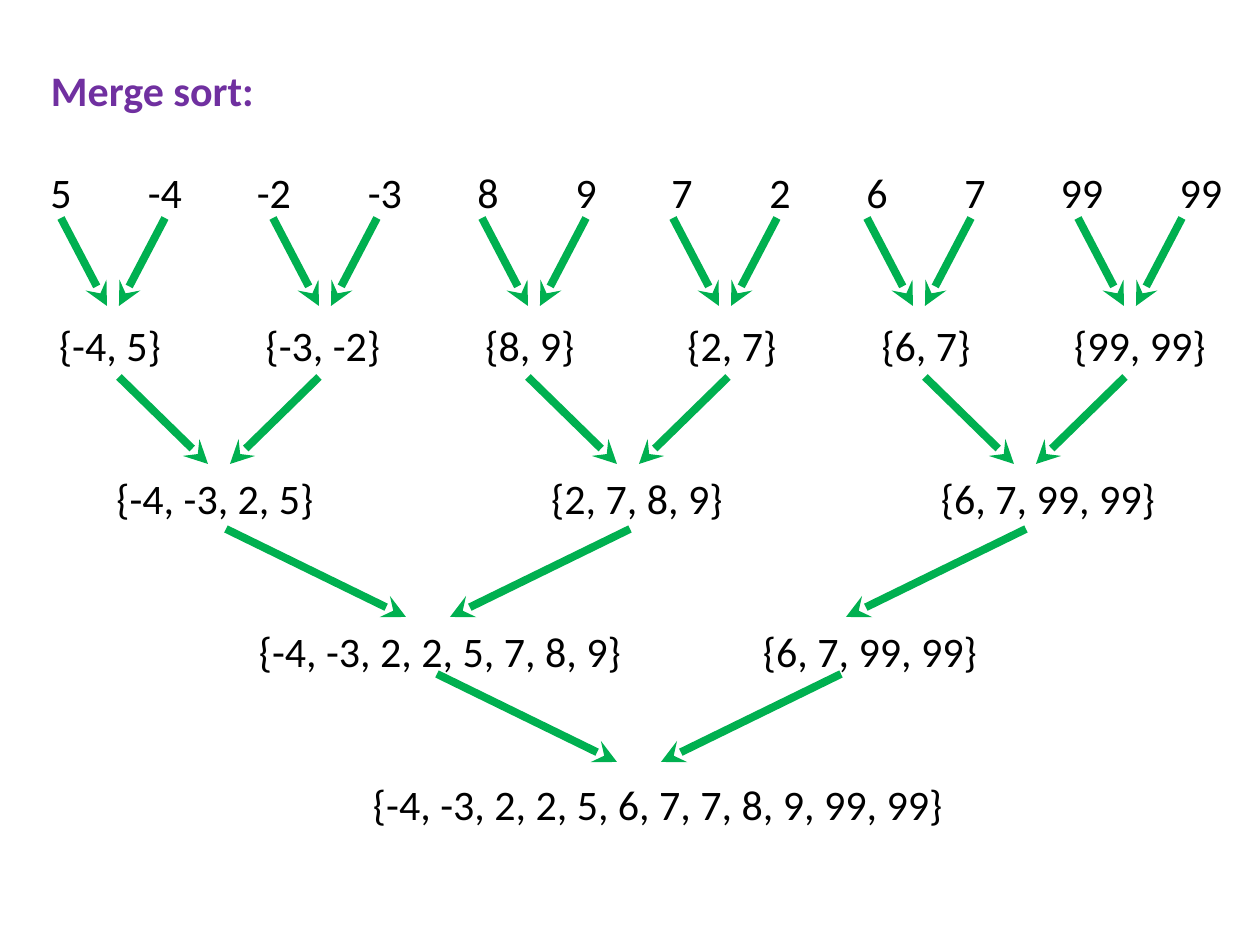
"""Build the merge sort slide: rows of lists joined by pairs of arrows."""
from lxml import etree
from pptx import Presentation
from pptx import util as u
from pptx.dml.color import RGBColor
from pptx.enum import shapes, text
from pptx.oxml.ns import qn

PX = 914400 / 126
PURPLE = RGBColor(0x70, 0x30, 0xA0)
GREEN = RGBColor(0x00, 0xB0, 0x50)
BLACK = RGBColor(0, 0, 0)
LEFT, WIDTH = 38, 1197

ROWS = [
    [("5", 61), ("-4", 165), ("-2", 274), ("-3", 385), ("8", 488), ("9", 586),
     ("7", 682), ("2", 780), ("6", 877), ("7", 975), ("99", 1082), ("99", 1201)],
    [("{-4, 5}", 110), ("{-3, -2}", 323), ("{8, 9}", 530),
     ("{2, 7}", 732), ("{6, 7}", 926), ("{99, 99}", 1140)],
    [("{-4, -3, 2, 5}", 215), ("{2, 7, 8, 9}", 637), ("{6, 7, 99, 99}", 1048)],
    [("{-4, -3, 2, 2, 5, 7, 8, 9}", 440), ("{6, 7, 99, 99}", 870)],
    [("{-4, -3, 2, 2, 5, 6, 7, 7, 8, 9, 99, 99}", 658)],
]
MERGES = [
    (218, 306, 52, 6, [113, 325, 534, 725, 919, 1130]),
    (377, 464, 100, 11, [219, 628, 1025]),
    (529, 617, 202, 22, [428, 824]),
    (674, 762, 202, 22, [639]),
]


def px(n):
    return u.Emu(round(n * PX))


def write(para, words, color=BLACK, bold=False, after=0):
    para.alignment = text.PP_ALIGN.LEFT
    para.space_before = u.Pt(0)
    para.space_after = u.Pt(after)
    run = para.add_run()
    run.text = words
    font = run.font
    font.name, font.size, font.bold = "Calibri", u.Pt(24), bold
    font.color.rgb = color


deck = Presentation()
deck.slide_width, deck.slide_height = px(1260), px(945)
slide = deck.slides.add_slide(deck.slide_layouts[5])

title = slide.shapes.title
title.left, title.top, title.width, title.height = px(LEFT), px(58), px(WIDTH), px(64)
body = slide.shapes.add_textbox(px(LEFT), px(167), px(WIDTH), px(667))
for box in (title, body):
    frame = box.text_frame
    frame.word_wrap = True
    frame.auto_size = text.MSO_AUTO_SIZE.NONE
    frame.vertical_anchor = text.MSO_ANCHOR.TOP
    frame.margin_left = frame.margin_right = frame.margin_bottom = 0
    frame.margin_top = 0
title.text_frame.margin_left = px(13)
title.text_frame.margin_top = px(6)
write(title.text_frame.paragraphs[0], "Merge sort:", color=PURPLE, bold=True)

for i, row in enumerate(ROWS):
    frame = body.text_frame
    para = frame.add_paragraph() if i else frame.paragraphs[0]
    write(para, "".join("\t" + word for word, x in row), after=58.6)
    tabs = etree.SubElement(para._p.get_or_add_pPr(), qn("a:tabLst"))
    for word, x in row:
        etree.SubElement(tabs, qn("a:tab"), pos=str(px(x - LEFT)), algn="ctr")

for top, end, reach, gap, mids in MERGES:
    for mid in mids:
        for side in (-1, 1):
            if mid == 824 and side < 0:
                continue
            line = slide.shapes.add_connector(
                shapes.MSO_CONNECTOR.STRAIGHT, px(mid + side * reach), px(top),
                px(mid + side * gap), px(end))
            line.line.color.rgb = GREEN
            line.line.width = u.Pt(4.5)
            etree.SubElement(line.line._get_or_add_ln(), qn("a:tailEnd"), type="stealth")
            etree.SubElement(line._element.spPr, qn("a:effectLst"))

deck.save("out.pptx")
